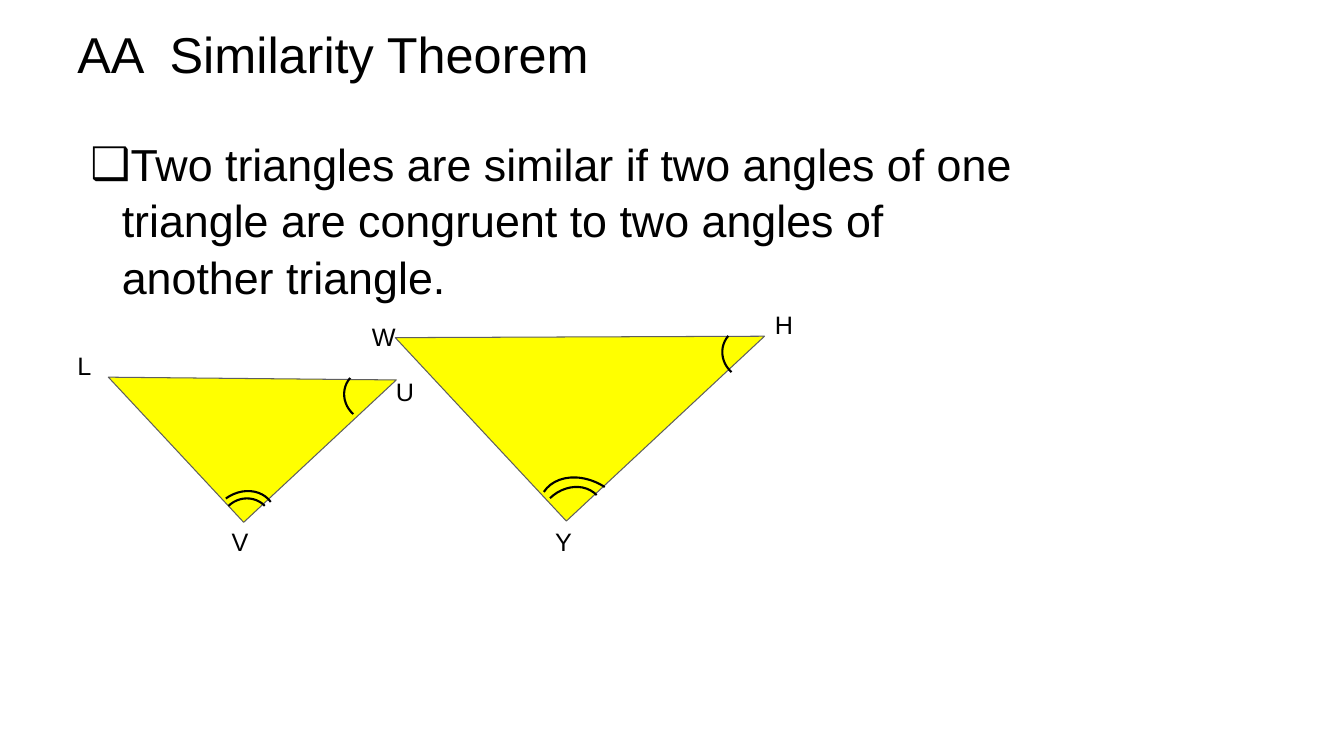
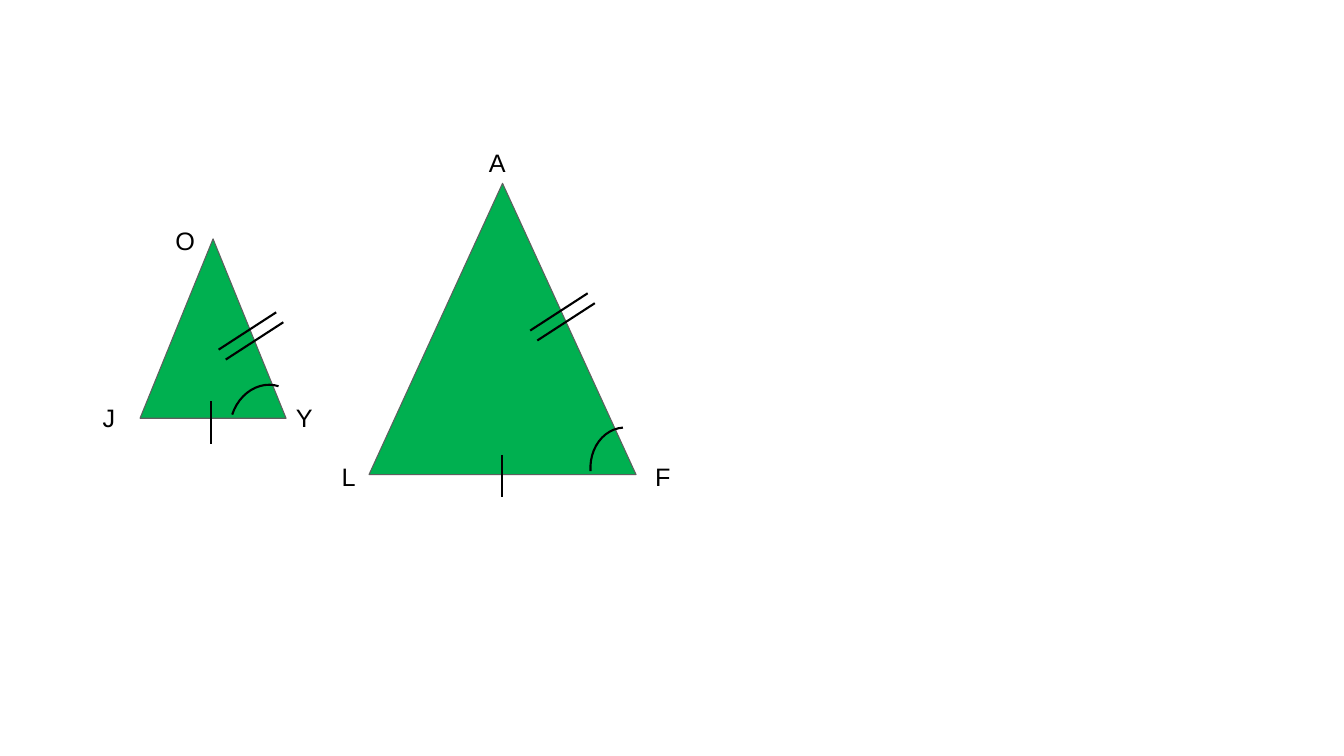
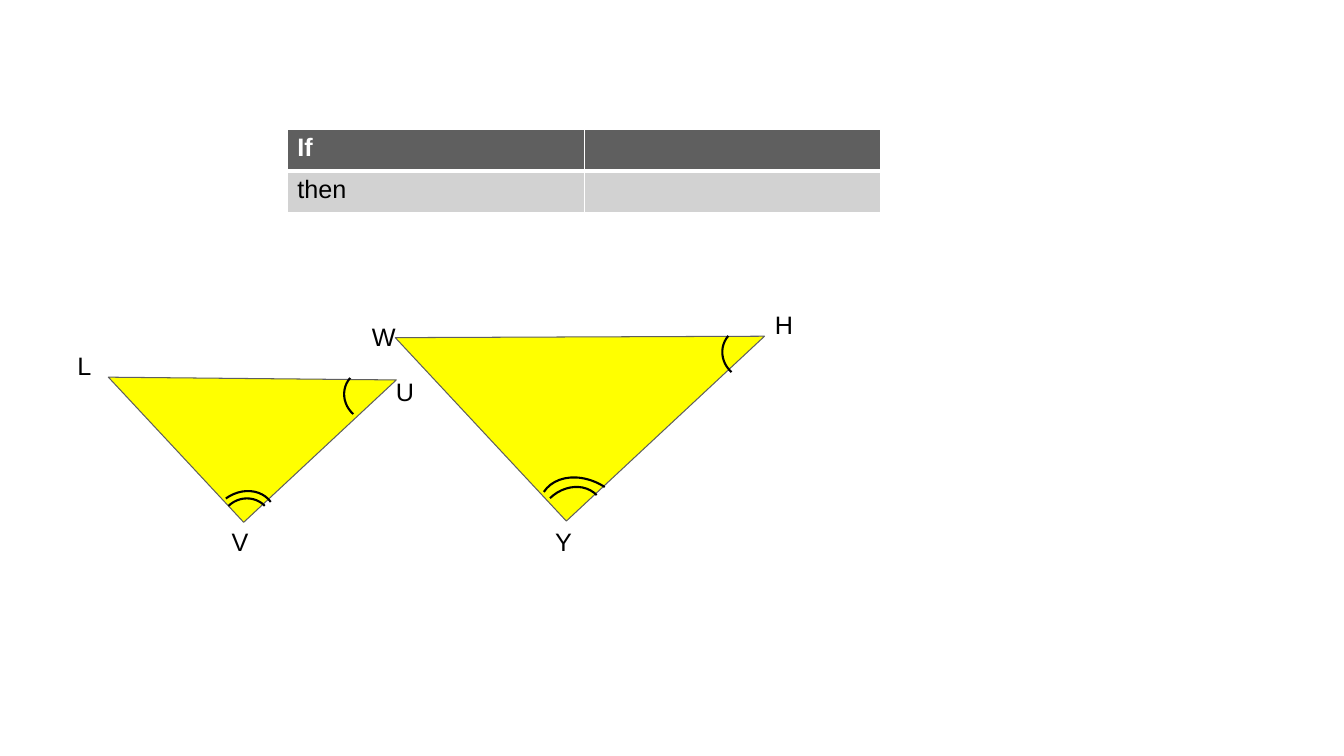
from lxml.etree import SubElement
from pptx import Presentation
from pptx.dml.color import RGBColor
from pptx.enum.shapes import MSO_CONNECTOR, MSO_SHAPE
from pptx.enum.text import MSO_ANCHOR, MSO_AUTO_SIZE
from pptx.oxml.ns import qn
from pptx.util import Cm, Pt

BLACK = RGBColor(0x00, 0x00, 0x00)
WHITE = RGBColor(0xFF, 0xFF, 0xFF)
GRAY = RGBColor(0x5F, 0x5F, 0x5F)
PALE_GRAY = RGBColor(0xD2, 0xD2, 0xD2)
YELLOW = RGBColor(0xFF, 0xFF, 0x00)
GREEN = RGBColor(0x00, 0xB0, 0x50)
FONT = "Arial"
LABEL_HEIGHT = 1.02


def write(frame, text, size=18, color=BLACK, bold=False, bullet=None,
          indent=0.79, spacing=None):
    paragraph = frame.paragraphs[0]
    if bullet:
        properties = paragraph._p.get_or_add_pPr()
        properties.set("marL", str(Cm(indent)))
        properties.set("indent", str(-Cm(indent)))
        SubElement(properties, qn("a:buFont"), typeface=FONT)
        SubElement(properties, qn("a:buChar"), char=bullet)
    if spacing:
        paragraph.line_spacing = spacing
    run = paragraph.add_run()
    run.text = text
    run.font.name = FONT
    run.font.size = Pt(size)
    run.font.bold = bold
    run.font.color.rgb = color


def add_border(cell, side, width):
    line = SubElement(cell._tc.get_or_add_tcPr(), qn(f"a:ln{side}"),
                      w=str(Pt(width)))
    fill = SubElement(line, qn("a:solidFill"))
    SubElement(fill, qn("a:srgbClr"), val=str(WHITE))


class Deck:
    """Holds the presentation, its style and the current slide; lengths are in cm."""

    def __init__(self):
        self.presentation = Presentation()
        self.presentation.slide_width = Cm(33.87)
        self.presentation.slide_height = Cm(19.05)
        self.slide = None

    def new_slide(self):
        blank = self.presentation.slide_layouts[6]
        self.slide = self.presentation.slides.add_slide(blank)

    def text(self, text, left, top, width, height, middle=False, **style):
        box = self.slide.shapes.add_textbox(
            Cm(left), Cm(top), Cm(width), Cm(height))
        frame = box.text_frame
        frame.word_wrap = True
        if middle:
            frame.vertical_anchor = MSO_ANCHOR.MIDDLE
        else:
            frame.auto_size = MSO_AUTO_SIZE.SHAPE_TO_FIT_TEXT
        write(frame, text, **style)

    def title(self, text):
        self.text(text, 1.7, 0.53, 30.48, 1.63, middle=True, size=36)

    def vertex(self, letter, left, top, width=1.52):
        self.text(letter, left, top, width, LABEL_HEIGHT)

    def figure(self, preset, left, top, width, height, rotation=0,
               fill=None, line=BLACK, weight=1.5):
        figure = self.slide.shapes.add_shape(
            preset, Cm(left), Cm(top), Cm(width), Cm(height))
        figure.shadow.inherit = False
        figure.rotation = rotation
        if fill is None:
            figure.fill.background()
        else:
            figure.fill.solid()
            figure.fill.fore_color.rgb = fill
        figure.line.color.rgb = line
        figure.line.width = Pt(weight)

    def triangle(self, preset, fill, *bounds, rotation=0):
        self.figure(preset, *bounds, rotation=rotation, fill=fill,
                    line=GRAY, weight=0.75)

    def angle_mark(self, left, top, width, height, rotation):
        self.figure(MSO_SHAPE.ARC, left, top, width, height, rotation)

    def tick(self, x, y, dx, dy):
        tick = self.slide.shapes.add_connector(
            MSO_CONNECTOR.STRAIGHT, Cm(x), Cm(y), Cm(x + dx), Cm(y + dy))
        tick.line.color.rgb = BLACK
        tick.line.width = Pt(1.5)
        SubElement(tick._element.spPr, qn("a:effectLst"))

    def double_tick(self, x, y):
        for step in range(2):
            self.tick(x + 0.18 * step, y + 0.25 * step, -1.45, 0.94)

    def table(self, rows, left, top, width, height):
        table = self.slide.shapes.add_table(
            len(rows), len(rows[0]), Cm(left), Cm(top),
            Cm(width), Cm(height)).table
        for row, texts in enumerate(rows):
            header = row == 0
            for column, text in enumerate(texts):
                cell = table.cell(row, column)
                for side in "LRTB":
                    thick = side == ("B" if header else "T")
                    add_border(cell, side, 3 if thick else 1)
                cell.fill.solid()
                cell.fill.fore_color.rgb = GRAY if header else PALE_GRAY
                if text:
                    write(cell.text_frame, text, bold=header,
                          color=WHITE if header else BLACK)

    def angle_angle_pair(self):
        """Triangles LUV and WHY with two pairs of equal angles marked."""
        for bounds in ((3.73, 7.04, 5.26, 5), (11.2, 5.33, 6.83, 6.32)):
            self.triangle(MSO_SHAPE.RIGHT_TRIANGLE, YELLOW, *bounds, rotation=317)
        for vertex in (("L", 1.7, 8.71), ("V", 5.59, 13.13), ("U", 9.73, 9.35),
                       ("W", 9.12, 7.98), ("H", 19.28, 7.67),
                       ("Y", 13.74, 13.13)):
            self.vertex(*vertex)
        for mark in ((5.26, 12.42, 1.73, 1.47, 324),
                     (5.54, 12.57, 1.32, 1.27, 316),
                     (13.79, 11.84, 1.88, 2.44, 303),
                     (13.49, 12.34, 1.8, 1.52, 316),
                     (8.66, 9.32, 1.32, 1.27, 221),
                     (18.19, 8.26, 1.32, 1.27, 221)):
            self.angle_mark(*mark)

    def side_angle_side_pair(self):
        """Triangles JOY and LAF with two sides and the angle between marked."""
        for bounds in ((3.53, 6.02, 3.68, 4.52), (9.3, 4.62, 6.73, 7.34)):
            self.triangle(MSO_SHAPE.ISOSCELES_TRIANGLE, GREEN, *bounds)
        for vertex in (("J", 2.34, 10.01), ("O", 4.17, 5.56), ("Y", 7.21, 10.01),
                       ("L", 8.36, 11.51, 1.19), ("A", 12.07, 3.58, 1.19),
                       ("F", 16.26, 11.51, 1.19)):
            self.vertex(*vertex)
        for x, y in ((5.31, 10.11), (12.65, 11.46)):
            self.tick(x, y, 0, 1.07)
        for x, y in ((6.96, 7.87), (14.81, 7.39)):
            self.double_tick(x, y)
        for left, top, rotation in ((5.66, 9.83, 288), (14.73, 10.92, 266)):
            self.angle_mark(left, top, 2.08, 1.78, rotation)


def main():
    deck = Deck()

    deck.new_slide()
    deck.title("AA  Similarity Theorem")
    deck.text("Two triangles are similar if two angles of one triangle are "
              "congruent to two angles of another triangle.",
              2.03, 3.25, 24.51, 4.37, size=32, bullet="❑", spacing=1.05)
    deck.angle_angle_pair()

    deck.new_slide()
    deck.side_angle_side_pair()

    deck.new_slide()
    deck.angle_angle_pair()
    deck.table((("If", ""), ("then", "")), 7.24, 3.25, 14.96, 2.11)

    deck.presentation.save("out.pptx")


if __name__ == "__main__":
    main()
